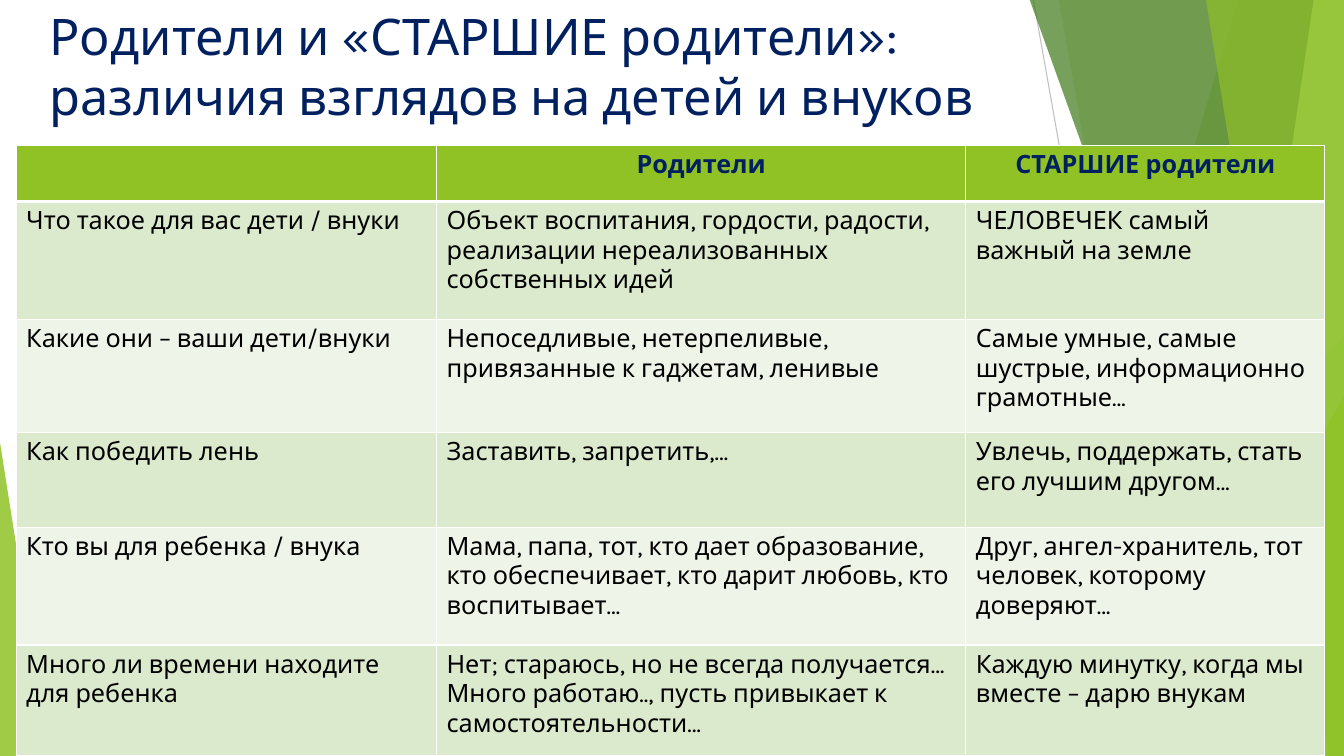
import dataclasses

import lxml.etree
import pptx
import pptx.dml.color
import pptx.enum.shapes
import pptx.enum.text
import pptx.oxml
import pptx.oxml.ns
import pptx.util

Inches = pptx.util.Inches
Pt = pptx.util.Pt
qn = pptx.oxml.ns.qn


@dataclasses.dataclass(frozen=True)
class Theme:
    font: str = "Karla"
    title_size: int = 36
    table_size: int = 18
    navy: str = "002060"
    black: str = "000000"
    white: str = "FFFFFF"
    grey: str = "BFBFBF"
    light_grey: str = "D9D9D9"
    green: str = "90C226"
    leaf: str = "54A021"
    forest: str = "3F7819"
    lime: str = "C0E474"
    bands: tuple = ("DBE9CD", "EEF4E8")


class SlideBuilder:
    def __init__(self, prs, theme):
        self.theme = theme
        self.slide = prs.slides.add_slide(prs.slide_layouts[5])
        self.shapes = self.slide.shapes

    def color(self, value):
        return pptx.dml.color.RGBColor.from_string(value)

    def format_text(self, p, size, color, bold=False):
        for r in p.runs:
            r.font.name = self.theme.font
            r.font.size = Pt(size)
            r.font.bold = bold
            r.font.color.rgb = self.color(color)

    def title(self, text, left, top, width, height):
        sp = self.shapes.title
        sp.left, sp.top = Inches(left), Inches(top)
        sp.width, sp.height = Inches(width), Inches(height)
        tf = sp.text_frame
        tf.text = text
        tf.word_wrap = True
        tf.auto_size = pptx.enum.text.MSO_AUTO_SIZE.NONE
        tf.vertical_anchor = pptx.enum.text.MSO_ANCHOR.TOP
        p = tf.paragraphs[0]
        p.alignment = pptx.enum.text.PP_ALIGN.LEFT
        self.format_text(p, self.theme.title_size, self.theme.navy)

    def line(self, start, end, color):
        cx = self.shapes.add_connector(
            pptx.enum.shapes.MSO_CONNECTOR.STRAIGHT,
            *(Inches(v) for v in start + end))
        cx.line.color.rgb = self.color(color)
        cx.line.width = Pt(0.75)
        lxml.etree.SubElement(cx._element.spPr, qn("a:effectLst"))

    def paint(self, sp, color, opacity):
        sp.shadow.inherit = False
        sp.line.fill.background()
        sp.fill.solid()
        sp.fill.fore_color.rgb = self.color(color)
        clr = sp._element.spPr.find(qn("a:solidFill"))[0]
        lxml.etree.SubElement(clr, qn("a:alpha")).set("val", str(opacity * 1000))

    def facet(self, top_x, bottom_x, color, opacity):
        right, top, bottom = 13.33, -0.01, 7.5
        points = [(right, top), (right, bottom), (bottom_x, bottom)]
        fb = self.shapes.build_freeform(Inches(top_x), Inches(top))
        fb.add_line_segments([(Inches(x), Inches(y)) for x, y in points])
        self.paint(fb.convert_to_shape(), color, opacity)

    def triangle(self, left, top, width, height, apex, color, opacity):
        sp = self.shapes.add_shape(
            pptx.enum.shapes.MSO_SHAPE.ISOSCELES_TRIANGLE,
            Inches(left), Inches(top), Inches(width), Inches(height))
        sp.adjustments[0] = apex
        self.paint(sp, color, opacity)

    def borders(self, cell, bottom_width):
        tc_pr = cell._tc.get_or_add_tcPr()
        widths = {"lnL": 1, "lnR": 1, "lnT": 1, "lnB": bottom_width}
        for i, (side, width) in enumerate(widths.items()):
            ln = lxml.etree.Element(qn("a:" + side), w=str(Pt(width)))
            fill = lxml.etree.SubElement(ln, qn("a:solidFill"))
            lxml.etree.SubElement(fill, qn("a:srgbClr"), val=self.theme.white)
            tc_pr.insert(i, ln)

    def table(self, rows, left, top, widths, heights):
        t = self.theme
        tbl = self.shapes.add_table(
            len(rows), len(widths), Inches(left), Inches(top),
            Inches(sum(widths)), Inches(sum(heights))).table
        for col, width in zip(tbl.columns, widths):
            col.width = Inches(width)
        for i, (row, height) in enumerate(zip(rows, heights)):
            tbl.rows[i].height = Inches(height)
            header = i == 0
            for j, text in enumerate(row):
                cell = tbl.cell(i, j)
                cell.fill.solid()
                cell.fill.fore_color.rgb = self.color(
                    t.green if header else t.bands[(i - 1) % 2])
                self.borders(cell, 3 if header else 1)
                cell.text_frame.text = text
                for p in cell.text_frame.paragraphs:
                    if header:
                        p.alignment = pptx.enum.text.PP_ALIGN.CENTER
                    self.format_text(
                        p, t.table_size, t.navy if header else t.black, header)


ROWS = [
    ("", "Родители", "СТАРШИЕ родители"),
    ("Что такое для вас дети / внуки",
     "Объект воспитания, гордости, радости, реализации нереализованных собственных идей",
     "ЧЕЛОВЕЧЕК самый важный на земле"),
    ("Какие они – ваши дети/внуки",
     "Непоседливые, нетерпеливые, привязанные к гаджетам, ленивые",
     "Самые умные, самые шустрые, информационно грамотные…"),
    ("Как победить лень",
     "Заставить, запретить,…",
     "Увлечь, поддержать, стать его лучшим другом…"),
    ("Кто вы для ребенка / внука",
     "Мама, папа, тот, кто дает образование, кто обеспечивает, кто дарит любовь, кто воспитывает…",
     "Друг, ангел-хранитель, тот человек, которому доверяют…"),
    ("Много ли времени находите для ребенка",
     "Нет; стараюсь, но не всегда получается…\n"
     "Много работаю.., пусть привыкает к самостоятельности…",
     "Каждую минутку, когда мы вместе – дарю внукам"),
]


def main():
    prs = pptx.Presentation()
    prs.slide_width, prs.slide_height = Inches(13.33), Inches(7.5)
    theme = Theme()
    s = SlideBuilder(prs, theme)
    s.line((10.25, 0), (11.58, 7.5), theme.grey)
    s.line((13.33, 4.03), (8.12, 7.5), theme.light_grey)
    s.facet(12.28, 10.04, theme.green, 30)
    s.facet(10.5, 11.83, theme.green, 20)
    s.triangle(9.77, 3.33, 3.56, 4.17, 1, theme.leaf, 72)
    s.facet(10.21, 12.91, theme.forest, 70)
    s.facet(13.03, 11.92, theme.lime, 70)
    s.facet(11.96, 13.18, theme.green, 65)
    s.triangle(11.34, 3.93, 1.99, 3.57, 1, theme.green, 80)
    s.triangle(0, 4.39, 0.49, 3.11, 0, theme.green, 85)
    s.title("Родители и «СТАРШИЕ родители»:\vразличия взглядов на детей и внуков",
            0.39, 0, 9.4, 1.44)
    s.table(ROWS, 0.16, 1.44, (4.17, 5.25, 3.56),
            (0.56, 1.17, 1.12, 0.94, 1.17, 1.1))
    prs.save("out.pptx")


if __name__ == "__main__":
    main()
